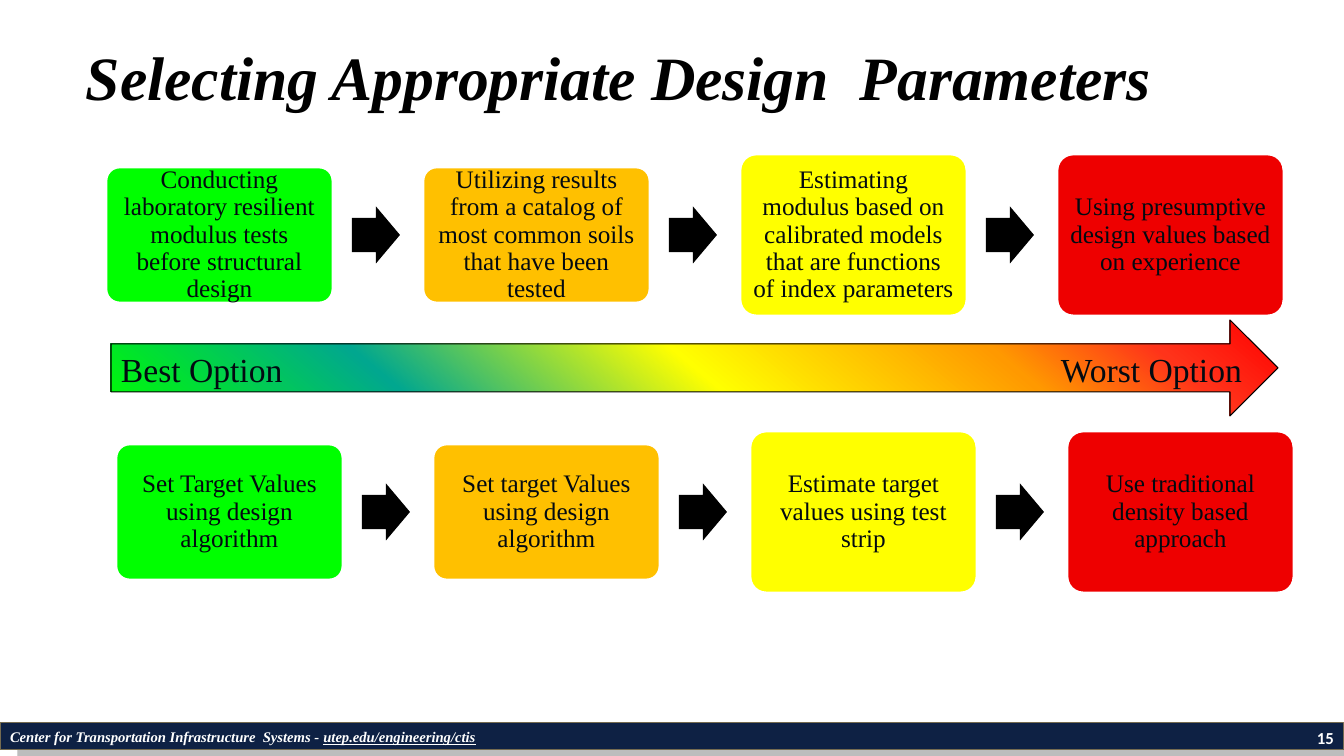
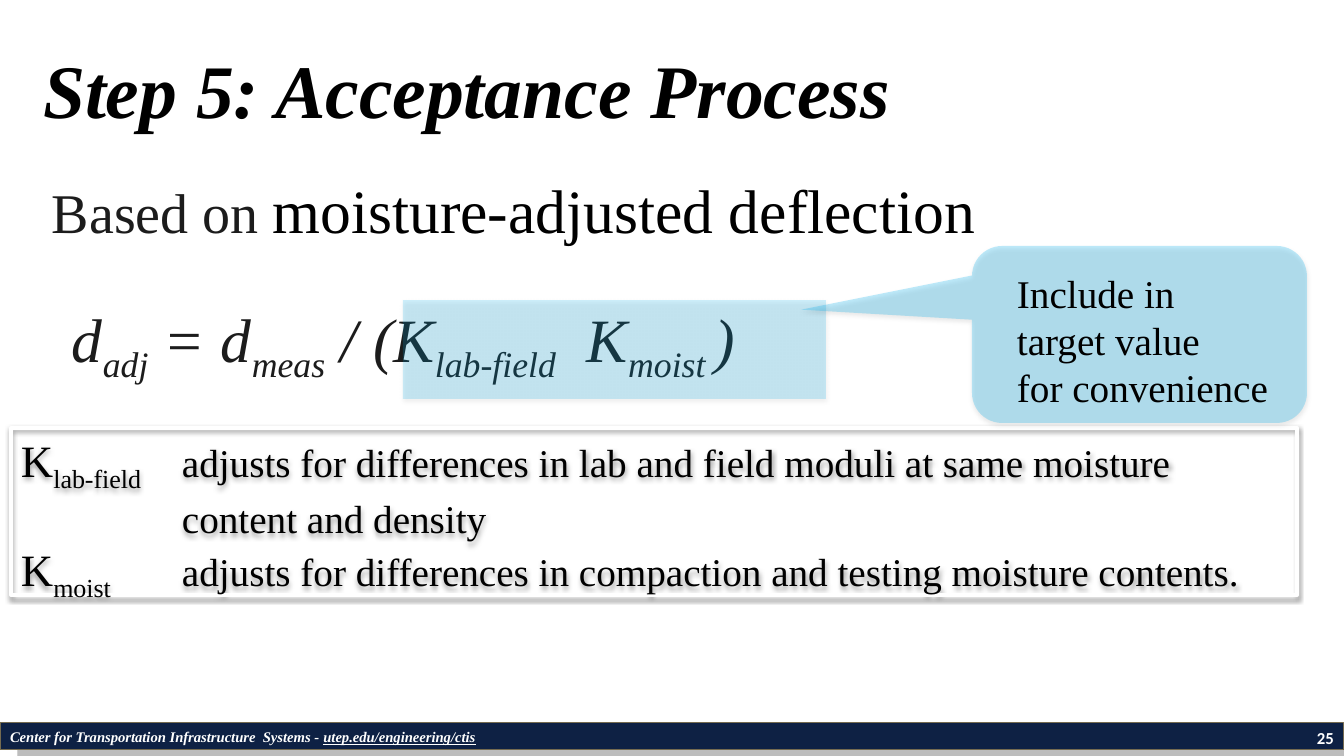
"""Builds two slides on choosing design parameters and the acceptance process."""
from lxml.etree import SubElement
from pptx import Presentation
from pptx.dml.color import RGBColor
from pptx.enum.shapes import MSO_SHAPE as SHAPE
from pptx.enum.text import MSO_ANCHOR as ANCHOR, PP_ALIGN as ALIGN
from pptx.oxml import parse_xml
from pptx.oxml.ns import nsdecls, qn
from pptx.util import Emu, Pt

WIDTH, HEIGHT = 1344, 756
SCALE = 12192000 / WIDTH
SERIF, SANS = "Times New Roman", "Calibri"
BLACK, WHITE, INK, CHARCOAL = "000000", "FFFFFF", "030A11", "1C1C1C"
NAVY, BRONZE, SKY = "0E2144", "756B50", "00B0F0"
OPTION_COLORS = ["00FF00", "FFC000", "FFFF00", "EE0000"]
SPECTRUM = [(0, "FF0000"), (12, "FF331A"), (25, "FF9900"),
            (50, "FFFF00"), (75, "01A78F"), (100, "00FF00")]
SOFT_SHADOW = (35, 3.1, 1.8, 90)
SUB = {"baseline": -25}

FOOTER = [("Center for Transportation Infrastructure  Systems - ", {}),
          ("utep.edu/engineering/ctis", {"underline": True})]

OPTION_ROWS = [
    (106, 235, ["Conducting laboratory resilient modulus tests before structural design",
                "Utilizing results from a catalog of most common soils that have been tested",
                "Estimating modulus based on calibrated models that are functions of index parameters",
                "Using presumptive design values based on experience"]),
    (116, 512, ["Set Target Values using design algorithm",
                "Set target Values using design algorithm",
                "Estimate target values using test strip",
                "Use traditional density based approach"]),
]
BOX_WIDTH, BOX_PITCH, BOX_HEIGHTS = 227, 317, [136, 136, 162, 162]
STEP_OFFSET, STEP_WIDTH, STEP_HEIGHT = 246, 48, 57

BASIS = [("Based on ", {"size": 40, "color": CHARCOAL}),
         ("moisture-adjusted deflection", {})]
FORMULA = [("d", {}), ("adj", SUB), (" = d", {}), ("meas", SUB), (" / (K", {}),
           ("lab-field", SUB), ("\tK", {}), ("moist ", SUB), (")", {})]
FACTORS = [
    ("lab-field", "adjusts for differences in lab and field moduli at same moisture content and density"),
    ("moist", "adjusts for differences in compaction and testing moisture contents."),
]
CALLOUT = ["Include in", "target value", "for convenience"]


def px(value):
    return Emu(round(value * SCALE))


def rgb(value):
    return RGBColor.from_string(value)


def set_shadow(shape, opacity, blur, distance, angle):
    effects = shape._element.spPr.find(qn("a:effectLst"))
    outer = SubElement(effects, qn("a:outerShdw"), blurRad=str(Pt(blur)), dist=str(Pt(distance)),
                       dir=str(angle * 60000), algn="tl", rotWithShape="0")
    color = SubElement(outer, qn("a:srgbClr"), val=BLACK)
    SubElement(color, qn("a:alpha"), val=str(opacity * 1000))


def set_gradient(shape, stops, angle):
    marks = "".join(f'<a:gs pos="{position * 1000}"><a:srgbClr val="{color}"/></a:gs>'
                    for position, color in stops)
    gradient = parse_xml(f'<a:gradFill {nsdecls("a")} rotWithShape="1"><a:gsLst>{marks}</a:gsLst>'
                         f'<a:lin ang="{angle * 60000}" scaled="0"/></a:gradFill>')
    properties = shape._element.spPr
    properties.replace(properties.find(qn("a:noFill")), gradient)


def add_shape(slide, kind, box, fill=None, opacity=100, line=None, shadow=None, adjustments=()):
    shape = slide.shapes.add_shape(kind, *map(px, box))
    shape.shadow.inherit = False
    for index, value in enumerate(adjustments):
        shape.adjustments[index] = value
    if fill:
        shape.fill.solid()
        shape.fill.fore_color.rgb = rgb(fill)
        if opacity < 100:
            color = shape._element.spPr.find(qn("a:solidFill")).find(qn("a:srgbClr"))
            SubElement(color, qn("a:alpha"), val=str(opacity * 1000))
    else:
        shape.fill.background()
    if line:
        shape.line.color.rgb = rgb(line[0])
        shape.line.width = Pt(line[1])
    else:
        shape.line.fill.background()
    if shadow:
        set_shadow(shape, *shadow)
    return shape


def style_run(run, size=None, color=None, underline=None, baseline=None):
    if size:
        run.font.size = Pt(size)
    if color:
        run.font.color.rgb = rgb(color)
    if underline:
        run.font.underline = True
    if baseline:
        run.font._element.set("baseline", str(baseline * 1000))


def write(shape, paragraphs, size, color=BLACK, font=SERIF, bold=False, italic=False,
          align=ALIGN.LEFT, anchor=ANCHOR.MIDDLE, margins=(10, 5, 10, 5),
          spacing=None, hanging=0, tab=None):
    frame = shape.text_frame
    frame.word_wrap = True
    frame.vertical_anchor = anchor
    (frame.margin_left, frame.margin_top,
     frame.margin_right, frame.margin_bottom) = map(px, margins)
    for index, runs in enumerate(paragraphs):
        paragraph = frame.add_paragraph() if index else frame.paragraphs[0]
        paragraph.alignment = align
        if spacing:
            paragraph.line_spacing = spacing
        properties = paragraph._p.get_or_add_pPr()
        if hanging:
            properties.set("marL", str(px(hanging)))
            properties.set("indent", str(-px(hanging)))
        if tab:
            tabs = SubElement(properties, qn("a:tabLst"))
            SubElement(tabs, qn("a:tab"), pos=str(px(tab[0])), algn=tab[1])
        paragraph.font.name = font
        paragraph.font.size = Pt(size)
        paragraph.font.bold = bold
        paragraph.font.italic = italic
        paragraph.font.color.rgb = rgb(color)
        for text, style in [(runs, {})] if isinstance(runs, str) else runs:
            run = paragraph.add_run()
            run.text = text
            style_run(run, **style)


def add_text(slide, box, paragraphs, size, **style):
    write(slide.shapes.add_textbox(*map(px, box)), paragraphs, size, **style)


def start_slide(presentation, title, title_box, title_size, number):
    slide = presentation.slides.add_slide(presentation.slide_layouts[6])
    band = add_shape(slide, SHAPE.RECTANGLE, (0, 723, WIDTH, 27), NAVY,
                     line=(BRONZE, 0.75), shadow=(25, 0, 18, 45))
    write(band, [FOOTER], 10.5, color=WHITE, bold=True, italic=True)
    add_text(slide, title_box, [title], title_size, bold=True, italic=True)
    add_text(slide, (1030, 723, 314, 33), [number], 12, color=WHITE, font=SANS,
             bold=True, align=ALIGN.RIGHT, anchor=ANCHOR.TOP)
    return slide


def add_option_row(slide, left, center, options):
    for index, (option, color, height) in enumerate(zip(options, OPTION_COLORS, BOX_HEIGHTS)):
        x = left + index * BOX_PITCH
        box = add_shape(slide, SHAPE.ROUNDED_RECTANGLE, (x, center - height / 2, BOX_WIDTH, height),
                        color, line=(WHITE, 2), adjustments=[0.1])
        write(box, [option], 18, color=INK, align=ALIGN.CENTER, margins=(8, 7, 8, 7), spacing=0.9)
        if index < len(options) - 1:
            add_shape(slide, SHAPE.RIGHT_ARROW,
                      (x + STEP_OFFSET, center - STEP_HEIGHT / 2, STEP_WIDTH, STEP_HEIGHT),
                      BLACK, adjustments=[0.6, 0.5])


def build_parameters(presentation):
    slide = start_slide(presentation, "Selecting Appropriate Design  Parameters",
                        (76, 21, 1092, 109), 44, "15")
    for row in OPTION_ROWS:
        add_option_row(slide, *row)
    scale_arrow = add_shape(slide, SHAPE.RIGHT_ARROW, (111, 320, 1167, 96), line=(BLACK, 0.75))
    set_gradient(scale_arrow, SPECTRUM, 130)
    write(scale_arrow, ["Best Option\tWorst Option"], 24, color=INK, tab=(1121, "r"),
          margins=(10, 5, 5, 2))


def build_acceptance(presentation):
    slide = start_slide(presentation, "Step 5: Acceptance Process", (33, 42, 1144, 93), 54, "25")
    add_text(slide, (42, 167, 1192, 84), [BASIS], 44)
    add_text(slide, (62, 300, 792, 85), [FORMULA], 44, color=CHARCOAL, italic=True, tab=(515, "l"))
    factors = add_shape(slide, SHAPE.RECTANGLE, (11, 428, 1286, 167),
                        line=(WHITE, 3), shadow=(38, 3.1, 1.6, 90))
    write(factors, [[("K", {}), (name, SUB), ("\t" + meaning, {"size": 28})]
                    for name, meaning in FACTORS],
          32, anchor=ANCHOR.TOP, margins=(10, 5, 30, 5), hanging=161)
    add_shape(slide, SHAPE.RECTANGLE, (403, 300, 423, 99), SKY, opacity=19, shadow=SOFT_SHADOW)
    add_shape(slide, SHAPE.ROUNDED_RECTANGULAR_CALLOUT, (972, 246, 335, 177), SKY,
              opacity=25, shadow=SOFT_SHADOW, adjustments=[-1.01, -0.14, 0.17])
    add_text(slide, (1007, 264, 290, 152), CALLOUT, 28)


def main():
    presentation = Presentation()
    presentation.slide_width, presentation.slide_height = px(WIDTH), px(HEIGHT)
    build_parameters(presentation)
    build_acceptance(presentation)
    presentation.save("out.pptx")


if __name__ == "__main__":
    main()
